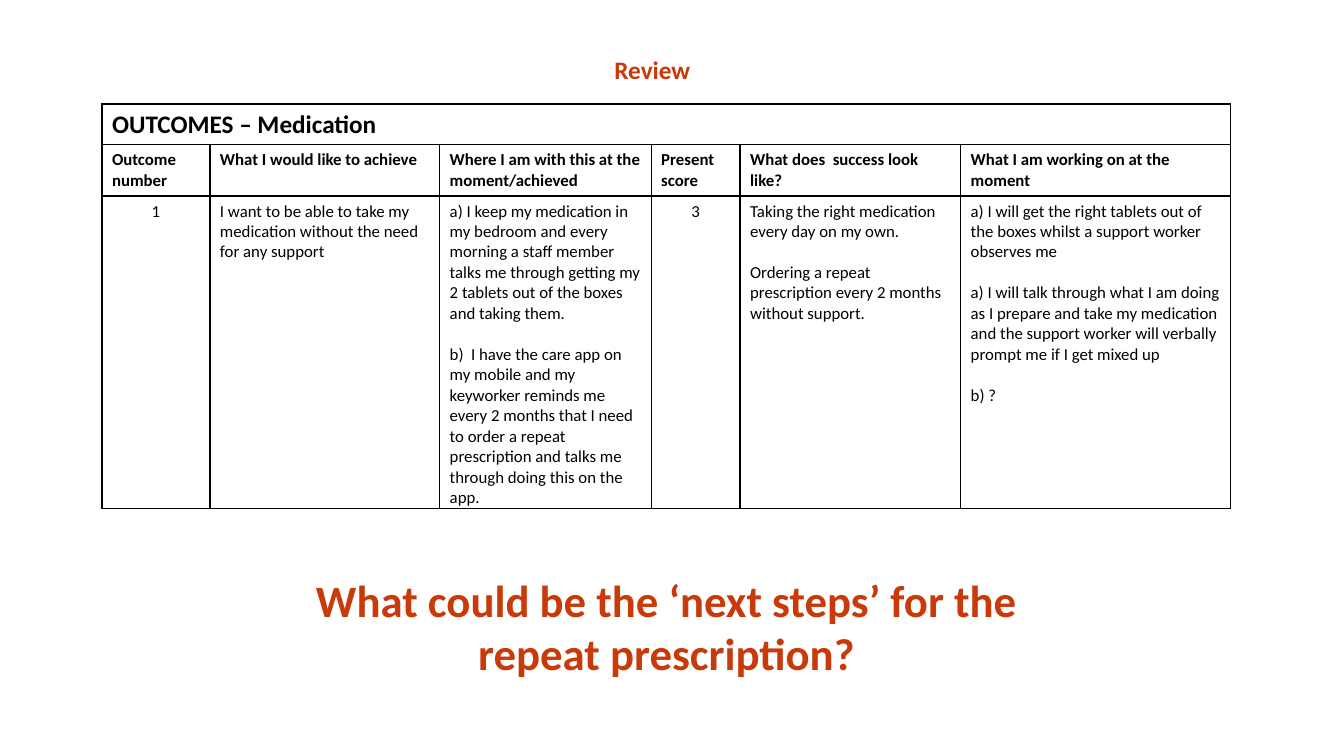
from dataclasses import dataclass

from lxml import etree
from pptx import Presentation
from pptx import util as u
from pptx.dml.color import RGBColor
from pptx.enum import text
from pptx.oxml import ns


@dataclass(frozen=True)
class Theme:
    font: str = "Calibri"
    ink: str = "000000"
    accent: str = "C83A09"
    body_size: int = 12
    heading_size: int = 18
    question_size: int = 32
    body_gap: float = 14.65  # one line of body text
    border: int = 1


THEME = Theme()
CENTER = text.PP_ALIGN.CENTER
LEFT = text.PP_ALIGN.LEFT

TABLE_HEADING = "OUTCOMES – Medication"

# Column heading, width in cm, alignment of the entry, paragraphs of the entry
OUTCOME_COLUMNS = [
    ("Outcome number", 2.72, CENTER, ["1"]),
    ("What I would like to achieve", 5.79, LEFT, [
        "I want to be able to take my medication without the need for any support",
    ]),
    ("Where I am with this at the moment/achieved", 5.33, LEFT, [
        "a) I keep my medication in my bedroom and every morning a staff member "
        "talks me through getting my 2 tablets out of the boxes and taking them.",
        "b)  I have the care app on my mobile and my keyworker reminds me every "
        "2 months that I need to order a repeat prescription and talks me through "
        "doing this on the app.",
    ]),
    ("Present score", 2.24, CENTER, ["3"]),
    ("What does  success look like?", 5.56, LEFT, [
        "Taking the right medication every day on my own.",
        "Ordering a repeat prescription every 2 months without support.",
    ]),
    ("What I am working on at the moment", 6.81, LEFT, [
        "a) I will get the right tablets out of the boxes whilst a support worker "
        "observes me",
        "a) I will talk through what I am doing as I prepare and take my medication "
        "and the support worker will verbally prompt me if I get mixed up",
        "b) ?",
    ]),
]
ROW_HEIGHTS = [1.03, 1.29, 7.87]


def write(frame, paragraphs, size, color, bold=False, align=LEFT):
    """Fill a text frame, parting its paragraphs by one body line."""
    frame.word_wrap = True
    for index, words in enumerate(paragraphs):
        paragraph = frame.add_paragraph() if index else frame.paragraphs[0]
        paragraph.alignment = align
        paragraph.space_before = u.Pt(THEME.body_gap if index else 0)
        run = paragraph.add_run()
        run.text = words
        run.font.name = THEME.font
        run.font.size = u.Pt(size)
        run.font.bold = bold
        run.font.color.rgb = RGBColor.from_string(color)


def outline(cell):
    """Draw a solid border on all four sides of a cell."""
    cell.fill.background()
    properties = cell._tc.get_or_add_tcPr()
    for position, side in enumerate(("lnL", "lnR", "lnT", "lnB")):
        line = etree.Element(ns.qn(f"a:{side}"), w=str(u.Pt(THEME.border)))
        fill = etree.SubElement(line, ns.qn("a:solidFill"))
        etree.SubElement(fill, ns.qn("a:srgbClr"), val=THEME.ink)
        properties.insert(position, line)


def add_outcomes(slide):
    widths = [width for _, width, _, _ in OUTCOME_COLUMNS]
    outcomes = slide.shapes.add_table(
        len(ROW_HEIGHTS), len(widths), u.Cm(2.57), u.Cm(2.62),
        u.Cm(sum(widths)), u.Cm(sum(ROW_HEIGHTS))).table
    outcomes.first_row = outcomes.horz_banding = False
    for row, height in zip(outcomes.rows, ROW_HEIGHTS):
        row.height = u.Cm(height)
    for cell in outcomes.iter_cells():
        outline(cell)

    # Heading across all columns
    heading = outcomes.cell(0, 0)
    heading.merge(outcomes.cell(0, len(widths) - 1))
    write(heading.text_frame, [TABLE_HEADING], THEME.heading_size, THEME.ink, bold=True)

    # Column headings and the entries below them
    for index, (label, width, align, entry) in enumerate(OUTCOME_COLUMNS):
        outcomes.columns[index].width = u.Cm(width)
        write(outcomes.cell(1, index).text_frame, [label],
              THEME.body_size, THEME.ink, bold=True)
        entry_cell = outcomes.cell(2, index)
        entry_cell.margin_bottom = 0
        write(entry_cell.text_frame, entry, THEME.body_size, THEME.ink, align=align)


def add_title(slide, words):
    title = slide.shapes.title
    title.left, title.top = u.Cm(7.98), u.Cm(1.24)
    title.width, title.height = u.Cm(16.92), u.Cm(1.02)
    title.text_frame.auto_size = text.MSO_AUTO_SIZE.NONE
    title.text_frame.vertical_anchor = text.MSO_ANCHOR.TOP
    write(title.text_frame, [words], THEME.heading_size, THEME.accent,
          bold=True, align=CENTER)


def add_question(slide, words):
    question = slide.shapes.add_textbox(u.Cm(6.6), u.Cm(14.3), u.Cm(20.4), u.Cm(3))
    write(question.text_frame, [words], THEME.question_size, THEME.accent,
          bold=True, align=CENTER)


def main():
    deck = Presentation()
    deck.slide_width, deck.slide_height = u.Cm(33.87), u.Cm(19.05)
    slide = deck.slides.add_slide(deck.slide_layouts.get_by_name("Title Only"))
    add_title(slide, "Review")
    add_outcomes(slide)
    add_question(slide, "What could be the ‘next steps’ for the repeat prescription?")
    deck.save("out.pptx")


if __name__ == "__main__":
    main()
